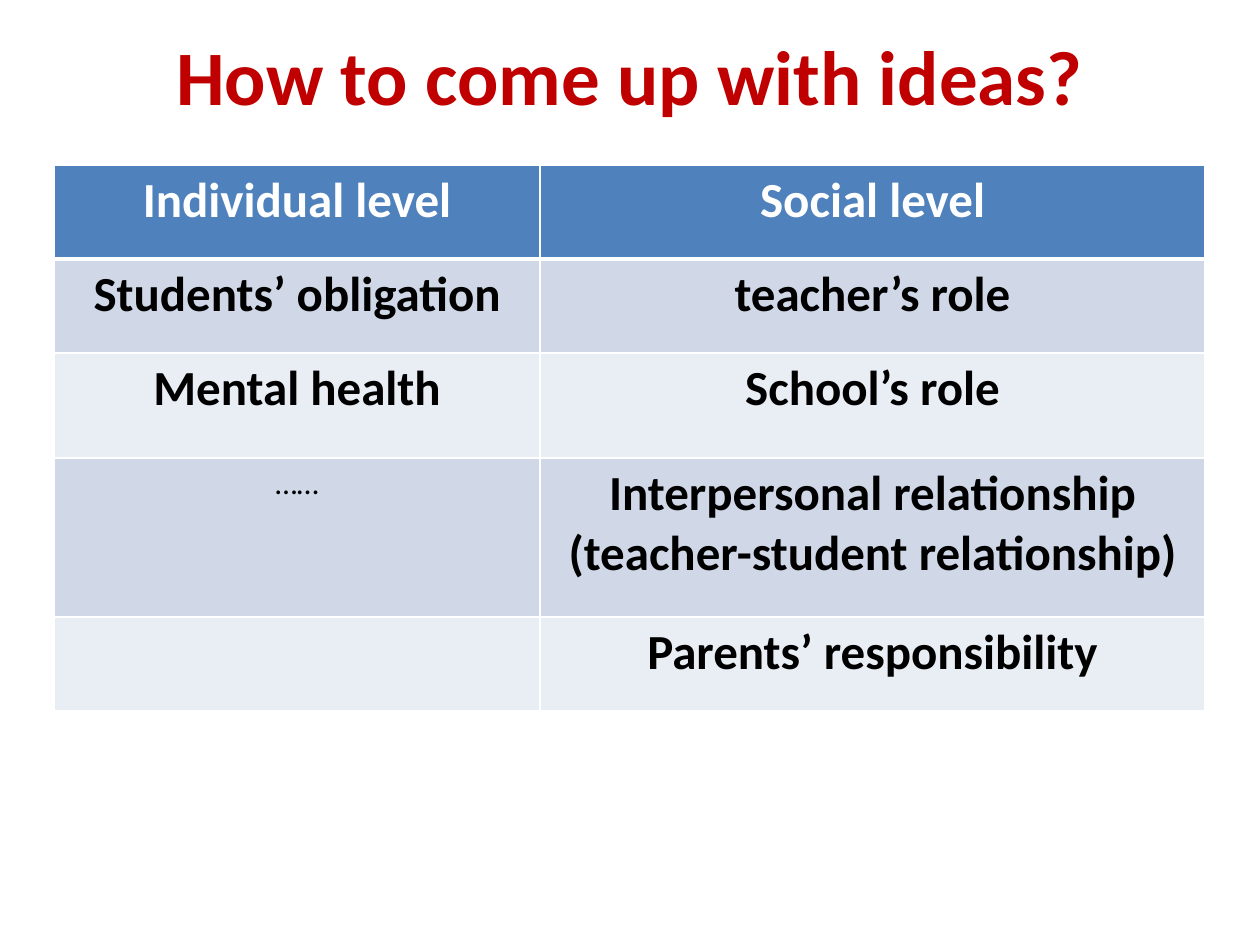
from dataclasses import dataclass

from lxml import etree
from pptx import Presentation
from pptx.dml.color import RGBColor
from pptx.enum.text import MSO_ANCHOR, PP_ALIGN
from pptx.oxml.ns import qn
from pptx.util import Emu, Pt

CENTER = PP_ALIGN.CENTER
MIDDLE = MSO_ANCHOR.MIDDLE
TITLE_ONLY = 5

PX_PER_INCH = 126
FONT = "Calibri"
RED = RGBColor(0xC0, 0x00, 0x00)
WHITE = RGBColor(0xFF, 0xFF, 0xFF)
BLACK = RGBColor(0x00, 0x00, 0x00)
HEADER_BLUE = RGBColor(0x4F, 0x81, 0xBD)
BAND_DARK = RGBColor(0xD0, 0xD8, 0xE8)
BAND_LIGHT = RGBColor(0xE9, 0xED, 0xF4)

THIN, THICK = 1, 3  # border widths in points
COLUMN_WIDTHS = (486, 665)


@dataclass(frozen=True)
class Entry:
    text: str
    size: int = 28
    bold: bool = True


@dataclass(frozen=True)
class Row:
    height: int
    individual: Entry
    social: Entry


ROWS = (
    Row(94, Entry("Individual level"), Entry("Social level")),
    Row(94, Entry("Students’ obligation"), Entry("teacher’s role")),
    Row(105, Entry("Mental health"), Entry("School’s role")),
    Row(159, Entry("……", size=18, bold=False),
        Entry("Interpersonal relationship\n(teacher-student relationship)")),
    Row(94, Entry(""), Entry("Parents’ responsibility")),
)


def px(length: int) -> Emu:
    return Emu(round(length * 914400 / PX_PER_INCH))


def write(frame, text: str, *, size: int, color: RGBColor, bold: bool) -> None:
    """Fill a text frame with centred paragraphs, one per line of text."""
    frame.text = text
    for para in frame.paragraphs:
        para.alignment = CENTER
        for span in para.runs:
            span.font.name = FONT
            span.font.size = Pt(size)
            span.font.bold = bold
            span.font.color.rgb = color


def set_borders(cell, *, top: int, bottom: int) -> None:
    """Draw white borders; call before filling, as lines precede the fill."""
    properties = cell._tc.get_or_add_tcPr()
    widths = {"a:lnL": THIN, "a:lnR": THIN, "a:lnT": top, "a:lnB": bottom}
    for tag, width in widths.items():
        line = etree.SubElement(properties, qn(tag), w=str(Pt(width)))
        fill = etree.SubElement(line, qn("a:solidFill"))
        etree.SubElement(fill, qn("a:srgbClr"), val=str(WHITE))


def draw_cell(cell, entry: Entry, row_index: int) -> None:
    is_header = row_index == 0
    set_borders(cell, top=THICK if row_index == 1 else THIN,
                bottom=THICK if is_header else THIN)
    band = BAND_DARK if row_index % 2 else BAND_LIGHT
    cell.fill.solid()
    cell.fill.fore_color.rgb = HEADER_BLUE if is_header else band
    write(cell.text_frame, entry.text, size=entry.size, bold=entry.bold,
          color=WHITE if is_header else BLACK)


def draw_title(page) -> None:
    title = page.shapes.title
    title.left, title.top = px(63), px(-4)
    title.width, title.height = px(1134), px(158)
    title.text_frame.vertical_anchor = MIDDLE
    write(title.text_frame, "How to come up with ideas?",
          size=44, color=RED, bold=True)


def draw_table(page) -> None:
    table = page.shapes.add_table(
        len(ROWS), len(COLUMN_WIDTHS), px(54), px(165),
        px(sum(COLUMN_WIDTHS)), px(sum(row.height for row in ROWS))).table
    for column, width in zip(table.columns, COLUMN_WIDTHS):
        column.width = px(width)
    for index, row in enumerate(ROWS):
        table.rows[index].height = px(row.height)
        for column_index, entry in enumerate((row.individual, row.social)):
            draw_cell(table.cell(index, column_index), entry, index)


def main() -> None:
    deck = Presentation()
    deck.slide_width, deck.slide_height = px(1260), px(945)
    page = deck.slides.add_slide(deck.slide_layouts[TITLE_ONLY])

    # Heading
    draw_title(page)
    # Ideas by level
    draw_table(page)

    deck.save("out.pptx")


if __name__ == "__main__":
    main()
